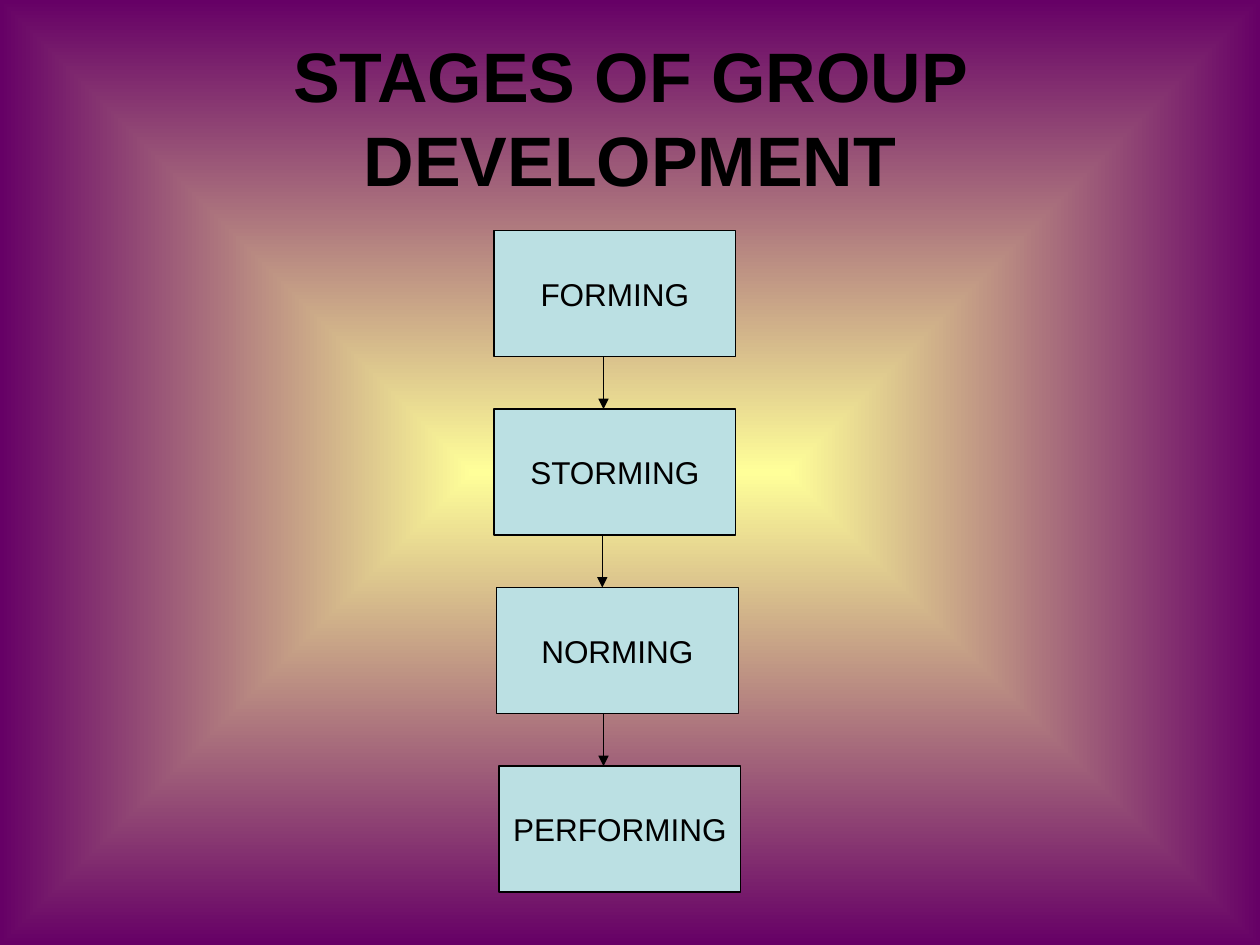
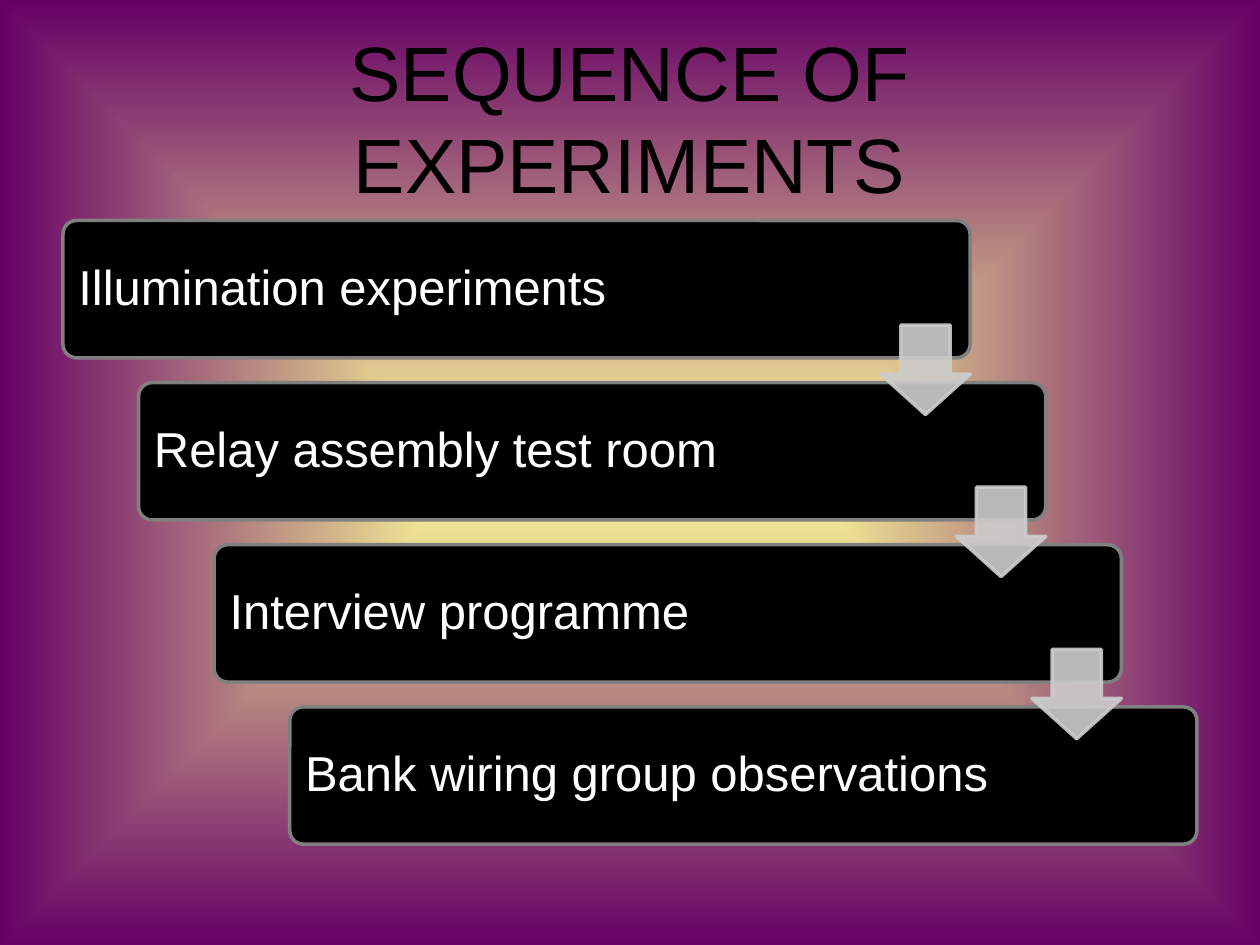
from dataclasses import dataclass

from lxml import etree
from pptx import Presentation
from pptx.dml.color import RGBColor
from pptx.enum.shapes import MSO_CONNECTOR, MSO_SHAPE
from pptx.enum.text import MSO_ANCHOR, MSO_AUTO_SIZE, PP_ALIGN
from pptx.oxml.ns import qn
from pptx.util import Inches, Pt

RECTANGLE = MSO_SHAPE.RECTANGLE
ROUNDED = MSO_SHAPE.ROUNDED_RECTANGLE
DOWN_ARROW = MSO_SHAPE.DOWN_ARROW
STRAIGHT = MSO_CONNECTOR.STRAIGHT
MIDDLE = MSO_ANCHOR.MIDDLE
LEFT, CENTER = PP_ALIGN.LEFT, PP_ALIGN.CENTER
NO_AUTOFIT = MSO_AUTO_SIZE.NONE

# The slide is a grid of 10 columns and 7.5 rows
WIDTH, HEIGHT = Inches(10), Inches(7.5)
COLUMN, ROW = WIDTH / 10, HEIGHT / 7.5
TITLE_ONLY = 5


@dataclass(frozen=True)
class Theme:
    font: str = "Arial"
    glow: str = "FFFF99"
    edge: str = "660066"
    ink: str = "000000"
    stage: str = "BBE0E3"
    card: str = "000000"
    card_border: str = "808080"
    card_text: str = "FFFFFF"
    step_arrow: str = "CCCCCC"
    strong_title_size: float = 40
    title_size: float = 44
    stage_size: float = 18
    card_size: float = 28
    thin: float = 0.75
    thick: float = 2


THEME = Theme()


def color(value):
    return RGBColor.from_string(value)


def cell(left, top, width, height):
    """Turn columns and rows into lengths."""
    return (round(left * COLUMN), round(top * ROW),
            round(width * COLUMN), round(height * ROW))


def write(frame, text, size, ink=THEME.ink, bold=False, align=CENTER,
          wrap=True, spacing=None, inset=None):
    frame.auto_size = NO_AUTOFIT
    frame.word_wrap = wrap
    frame.vertical_anchor = MIDDLE
    if inset is not None:
        frame.margin_left = frame.margin_right = Inches(inset)
    paragraph = frame.paragraphs[0]
    paragraph.alignment = align
    paragraph.line_spacing = spacing
    run = paragraph.add_run()
    run.text = text
    run.font.name = THEME.font
    run.font.size = Pt(size)
    run.font.bold = bold
    run.font.color.rgb = color(ink)


def add_box(slide, preset, area, fill, border, weight):
    box = slide.shapes.add_shape(preset, *cell(*area))
    box.shadow.inherit = False
    box.fill.solid()
    box.fill.fore_color.rgb = color(fill)
    box.line.color.rgb = color(border)
    box.line.width = Pt(weight)
    return box


def add_flow_arrow(slide, x, top, bottom):
    start_x, start_y, _, length = cell(x, top, 0, bottom - top)
    arrow = slide.shapes.add_connector(
        STRAIGHT, start_x, start_y, start_x, start_y + length)
    arrow.line.color.rgb = color(THEME.ink)
    arrow.line.width = Pt(THEME.thin)
    properties = arrow.element.spPr
    etree.SubElement(properties.find(qn("a:ln")), qn("a:tailEnd"), type="triangle")
    etree.SubElement(properties, qn("a:effectLst"))


def make_translucent(shape, percent):
    for tint in shape.element.spPr.iter(qn("a:srgbClr")):
        etree.SubElement(tint, qn("a:alpha"), val=str(percent * 1000))


def set_background(master):
    """Rectangular glow from the centre to the edges."""
    fill = master.background.fill
    fill.gradient()
    for stop, position, shade in zip(fill.gradient_stops, (0, 1),
                                     (THEME.glow, THEME.edge)):
        stop.position = position
        stop.color.rgb = color(shade)
    gradient = master.element.find(".//" + qn("a:gradFill"))
    gradient.remove(gradient.find(qn("a:lin")))
    glow = etree.SubElement(gradient, qn("a:path"), path="shape")
    etree.SubElement(glow, qn("a:fillToRect"),
                     dict.fromkeys("ltrb", "50000"))


def set_title_area(layout):
    title = layout.placeholders[0]
    title.left, title.top, title.width, title.height = cell(0.5, 0.3, 9, 1.25)


def add_slide(prs, title, size, bold=False):
    slide = prs.slides.add_slide(prs.slide_layouts[TITLE_ONLY])
    write(slide.shapes.title.text_frame, title, size, bold=bold)
    return slide


def add_stages(slide):
    """Vertical flow of boxes joined by thin arrows."""
    first_top, last_top, width, height = 1.83, 6.08, 1.92, 1
    stages = [("FORMING", 3.92), ("STORMING", 3.92),
              ("NORMING", 3.94), ("PERFORMING", 3.96)]
    arrow_columns = [4.79, 4.78, 4.79]
    pitch = (last_top - first_top) / (len(stages) - 1)

    for index, (stage, left) in enumerate(stages):
        box = add_box(slide, RECTANGLE,
                      (left, first_top + index * pitch, width, height),
                      THEME.stage, THEME.ink, THEME.thin)
        write(box.text_frame, stage, THEME.stage_size, wrap=False)
    for index, x in enumerate(arrow_columns):
        bottom = first_top + index * pitch + height
        add_flow_arrow(slide, x, bottom, bottom + pitch - height)


def add_experiments(slide):
    """Staircase of cards with a block arrow at each step."""
    left, top, width, height = 0.5, 1.75, 7.2, 1.09
    shift, last_top = 0.6, 5.61
    arrow_size, arrow_drop = 0.71, 0.83
    experiments = ["Illumination experiments", "Relay assembly test room",
                   "Interview programme", "Bank wiring group observations"]
    steps = len(experiments) - 1
    pitch = (last_top - top) / steps

    for index, experiment in enumerate(experiments):
        card = add_box(slide, ROUNDED,
                       (left + index * shift, top + index * pitch, width, height),
                       THEME.card, THEME.card_border, THEME.thick)
        card.adjustments[0] = 0.1
        write(card.text_frame, experiment, THEME.card_size,
              ink=THEME.card_text, align=LEFT, spacing=0.9, inset=0.09)
    for index in range(steps):
        arrow = add_box(slide, DOWN_ARROW,
                        (left + width - arrow_size + index * shift,
                         top + arrow_drop + index * pitch,
                         arrow_size, arrow_size),
                        THEME.step_arrow, THEME.step_arrow, THEME.thick)
        arrow.adjustments[0], arrow.adjustments[1] = 0.55, 0.45
        make_translucent(arrow, 90)


def main():
    prs = Presentation()
    prs.slide_width, prs.slide_height = WIDTH, HEIGHT
    set_background(prs.slide_master)
    set_title_area(prs.slide_layouts[TITLE_ONLY])

    add_stages(add_slide(prs, "STAGES OF GROUP DEVELOPMENT",
                         THEME.strong_title_size, bold=True))
    add_experiments(add_slide(prs, "SEQUENCE OF EXPERIMENTS", THEME.title_size))
    prs.save("out.pptx")


if __name__ == "__main__":
    main()
